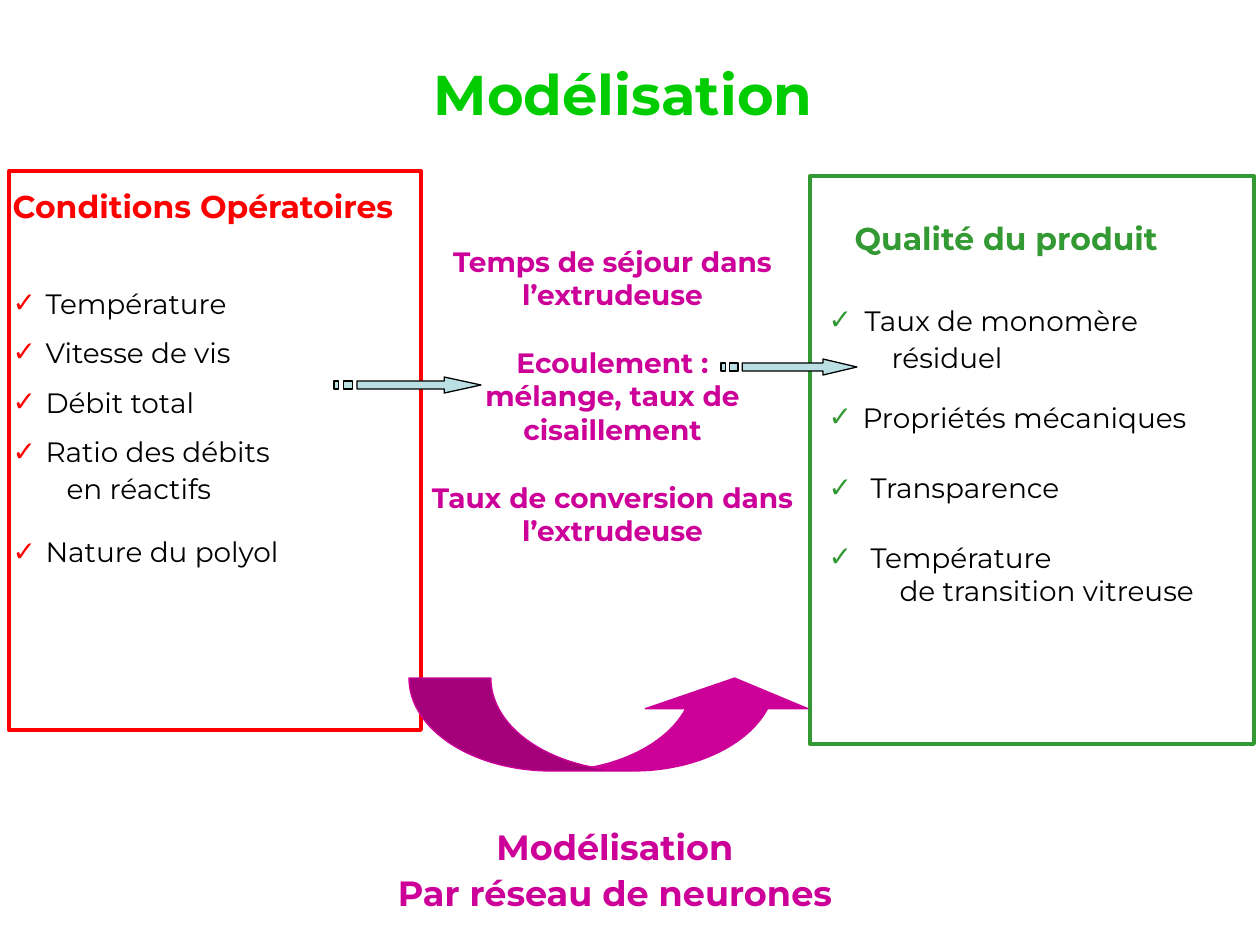
from pptx import Presentation
from pptx.dml.color import RGBColor
from pptx.enum.shapes import MSO_SHAPE
from pptx.enum.text import MSO_ANCHOR, MSO_AUTO_SIZE, PP_ALIGN
from pptx.oxml.ns import qn
from pptx.util import Emu, Pt
from lxml.etree import SubElement

SCALE = 914400 / 126
COLORS = {
    "title": "00CC00",
    "conditions": "FF0000",
    "quality": "339933",
    "model": "CC0099",
    "arrow": "BBE0E3",
    "ink": "000000",
}
FRAME_FORMAT = {
    "word_wrap": True,
    "auto_size": MSO_AUTO_SIZE.NONE,
    "vertical_anchor": MSO_ANCHOR.TOP,
}


def px(length):
    """Turn a length in px into EMU."""
    return Emu(round(length * SCALE))


def color(name):
    """Return the named colour."""
    return RGBColor.from_string(COLORS[name])


def set_all(target, values):
    """Set each attribute in a dict of format values."""
    for name, value in values.items():
        setattr(target, name, value)


def place(shape, box):
    """Move and size a shape to a px box."""
    set_all(shape, dict(zip(("left", "top", "width", "height"), map(px, box))))


def prepare_frame(shape, **changes):
    """Format the text frame of a shape and return it."""
    set_all(shape.text_frame, {**FRAME_FORMAT, **changes})
    return shape.text_frame


def write(frame, text, size, ink, bold=True, before=0, align=PP_ALIGN.LEFT, spacing=1.0):
    """Write one paragraph into a frame and return it."""
    para = frame.paragraphs[0]
    if para.runs:
        para = frame.add_paragraph()
    set_all(para, {"alignment": align, "space_before": px(before),
                   "space_after": Pt(0), "line_spacing": spacing})
    span = para.add_run()
    span.text = text
    set_all(span.font, {"name": "Montserrat", "size": Pt(size), "bold": bold})
    span.font.color.rgb = color(ink)
    return para


def indent(para, margin, first, bullet=None):
    """Indent a paragraph in px, with a check mark in the bullet colour if given."""
    props = para._p.get_or_add_pPr()
    props.set("marL", str(px(margin)))
    props.set("indent", str(px(first - margin)))
    if bullet is None:
        SubElement(props, qn("a:buNone"))
        return
    paint = SubElement(props, qn("a:buClr"))
    SubElement(paint, qn("a:srgbClr")).set("val", COLORS[bullet])
    SubElement(props, qn("a:buChar")).set("char", "✓")


def style(shape, fill, line, width):
    """Give a shape its fill, outline and no shadow."""
    shape.shadow.inherit = False
    if fill:
        shape.fill.solid()
        shape.fill.fore_color.rgb = color(fill)
    else:
        shape.fill.background()
    shape.line.color.rgb = color(line)
    shape.line.width = Pt(width)


def add_title(page, box, text):
    """Fill the title placeholder."""
    place(page.shapes.title, box)
    write(prepare_frame(page.shapes.title, word_wrap=False), text, 32, "title")


def add_panel(page, body, box, text_offset, text_size, ink, heading, items):
    """Build an outlined panel with a heading and a checked list."""
    left, top, width, height = box
    place(body, (left + text_offset[0], top + text_offset[1], *text_size))
    frame = prepare_frame(body)
    heading_text, heading_margin, bullet_margin = heading
    indent(write(frame, heading_text, 18, ink), heading_margin, heading_margin)
    for text, margin, before, checked in items:
        para = write(frame, text, 16, "ink", bold=False, before=before)
        indent(para, margin, bullet_margin if checked else margin,
               ink if checked else None)
    outline = page.shapes.add_shape(MSO_SHAPE.RECTANGLE, *map(px, box))
    style(outline, None, ink, 2.25)


def add_centered_text(page, box, lines, size, spacing=1.0):
    """Add centred bold lines, each with its space before."""
    frame = prepare_frame(page.shapes.add_textbox(*map(px, box)))
    for text, before in lines:
        write(frame, text, size, "model", before=before,
              align=PP_ALIGN.CENTER, spacing=spacing)


def add_striped_arrow(page, box):
    """Draw a striped arrow on a grid of 32 by 4 units."""
    left, top, width, height = box
    head = [(24, 0), (24, 1), (5, 1), (5, 3), (24, 3), (24, 4), (32, 2)]
    stripes = [[(a, 1), (a, 3), (b, 3), (b, 1)] for a, b in ((2, 4), (0, 1))]
    builder = page.shapes.build_freeform(
        *head[0], scale=(px(width) / 32, px(height) / 4))
    builder.add_line_segments(head[1:])
    for stripe in stripes:
        builder.move_to(*stripe[0])
        builder.add_line_segments(stripe[1:])
    style(builder.convert_to_shape(px(left), px(top)), "arrow", "ink", 0.75)


def add_model(page, box):
    """Draw the curved arrow with its caption below."""
    left, top, width, height = box
    add_centered_text(page, (left - 36, top + 137, width + 77, 103),
                      [("Modélisation", 0), ("Par réseau de neurones", 0)], 20, 1.1)
    arrow = page.shapes.add_shape(MSO_SHAPE.CURVED_UP_ARROW, *map(px, box))
    for index, value in enumerate((0.88, 1.75, 0.33)):
        arrow.adjustments[index] = value
    style(arrow, "model", "model", 0.75)


def main():
    """Build the slide and save the deck."""
    deck = Presentation()
    deck.slide_width, deck.slide_height = px(1260), px(945)
    page = deck.slides.add_slide(deck.slide_layouts[3])
    conditions, quality = page.placeholders[1], page.placeholders[2]
    add_title(page, (421, 53, 440, 81), "Modélisation")
    add_panel(page, conditions, (9, 171, 412, 559), (-9, 10), (427, 438),
              "conditions", ("Conditions Opératoires", 0, 0), [
                  ("Température", 33, 61, True),
                  ("Vitesse de vis", 33, 16, True),
                  ("Débit total", 33, 16, True),
                  ("Ratio des débits", 33, 16, True),
                  ("en réactifs", 54, 3, False),
                  ("Nature du polyol", 33, 30, True),
              ])
    add_centered_text(page, (409, 238, 407, 318), [
        ("Temps de séjour dans l’extrudeuse", 0),
        ("Ecoulement :", 34),
        ("mélange, taux de cisaillement", 0),
        ("Taux de conversion dans l’extrudeuse", 34),
    ], 16)
    add_striped_arrow(page, (334, 377, 147, 16))
    add_panel(page, quality, (810, 176, 444, 568), (-29, 37), (479, 406),
              "quality", ("Qualité du produit", 61, 35), [
                  ("Taux de monomère", 71, 46, True),
                  ("résiduel", 98, 4, False),
                  ("Propriétés mécaniques", 69, 26, True),
                  ("Transparence", 77, 37, True),
                  ("Température", 77, 36, True),
                  ("de transition vitreuse", 106, 0, False),
              ])
    add_striped_arrow(page, (721, 359, 136, 16))
    add_model(page, (409, 678, 407, 93))
    deck.save("out.pptx")


if __name__ == "__main__":
    main()
